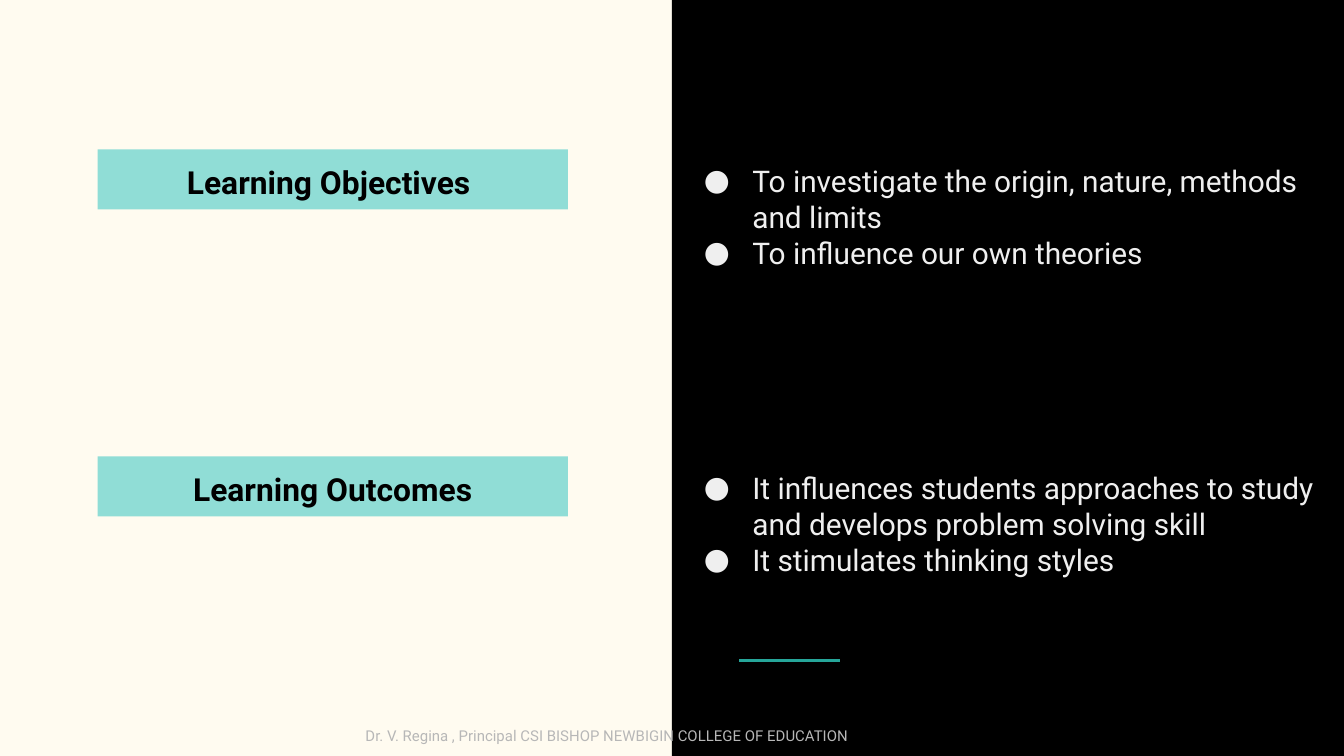
"""Build a slide of learning objectives and outcomes beside a dark panel."""
from lxml.etree import SubElement
from pptx import Presentation
from pptx.dml.color import RGBColor
from pptx.enum.shapes import MSO_CONNECTOR as CONNECTOR, MSO_SHAPE as SHAPE
from pptx.enum.text import MSO_ANCHOR as ANCHOR, PP_ALIGN as ALIGN
from pptx.oxml.ns import qn
from pptx.util import Pt


def color(value):
    return RGBColor.from_string(value)


def add_text(shape, lines, size, text_color, bold=False, align=ALIGN.LEFT, bullet=False):
    frame = shape.text_frame
    frame.word_wrap = True
    frame.vertical_anchor = ANCHOR.TOP
    frame.margin_left = frame.margin_right = Pt(7.2)
    frame.margin_top = frame.margin_bottom = Pt(7.2)
    for index, line in enumerate(lines):
        paragraph = frame.paragraphs[0] if index == 0 else frame.add_paragraph()
        paragraph.alignment = align
        run = paragraph.add_run()
        run.text = line
        run.font.name = "Roboto"
        run.font.size = Pt(size)
        run.font.bold = bold
        run.font.color.rgb = color(text_color)
        if bullet:
            properties = paragraph._p.get_or_add_pPr()
            properties.set("marL", str(Pt(36)))
            properties.set("indent", str(Pt(-26)))
            bullet_color = SubElement(properties, qn("a:buClr"))
            SubElement(bullet_color, qn("a:srgbClr"), val=text_color)
            SubElement(properties, qn("a:buFont"), typeface="Roboto")
            SubElement(properties, qn("a:buChar"), char="●")


presentation = Presentation()
presentation.slide_width = Pt(720)
presentation.slide_height = Pt(405)
slide = presentation.slides.add_slide(presentation.slide_layouts[6])
slide.background.fill.solid()
slide.background.fill.fore_color.rgb = color("FFFBF0")

panel = slide.shapes.add_shape(SHAPE.RECTANGLE, Pt(360), Pt(0), Pt(360), Pt(405))
panel.shadow.inherit = False
panel.fill.solid()
panel.fill.fore_color.rgb = color("000000")
panel.line.fill.background()

accent = slide.shapes.add_connector(CONNECTOR.STRAIGHT, Pt(396), Pt(354), Pt(450), Pt(354))
accent.line.color.rgb = color("26A69A")
accent.line.width = Pt(1.5)
SubElement(accent._element.spPr, qn("a:effectLst"))

sections = [
    ("Learning Objectives ", 80, 75.5, [
        "To investigate the origin, nature, methods and limits",
        "To influence our own theories",
    ]),
    ("Learning Outcomes", 244.5, 94, [
        "It influences students approaches to study and develops problem solving skill",
        "It stimulates thinking styles",
    ]),
]
for title, top, height, points in sections:
    heading = slide.shapes.add_shape(SHAPE.RECTANGLE, Pt(52.3), Pt(top), Pt(252), Pt(32.2))
    heading.shadow.inherit = False
    heading.fill.solid()
    heading.fill.fore_color.rgb = color("90DDD6")
    heading.line.fill.background()
    add_text(heading, [title], 17, "000000", bold=True, align=ALIGN.CENTER)

    body = slide.shapes.add_textbox(Pt(360), Pt(top), Pt(360), Pt(height))
    add_text(body, points, 16, "EFEFEF", bullet=True)

footer = slide.shapes.add_textbox(Pt(188.7), Pt(384.5), Pt(392.4), Pt(20.2))
add_text(footer, ["Dr. V. Regina , Principal CSI BISHOP NEWBIGIN COLLEGE OF EDUCATION"], 8, "B7B7B7")

presentation.save("out.pptx")
